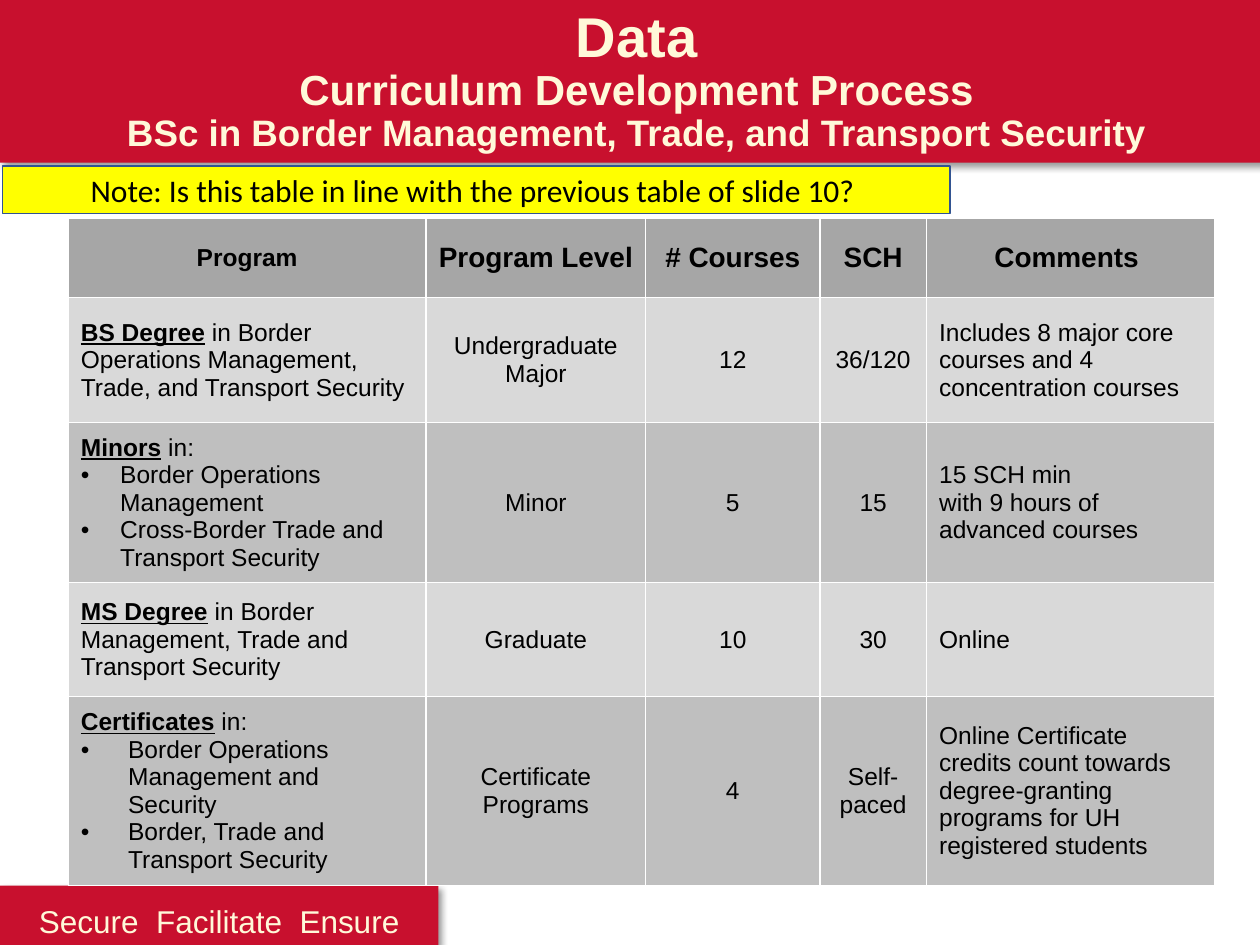
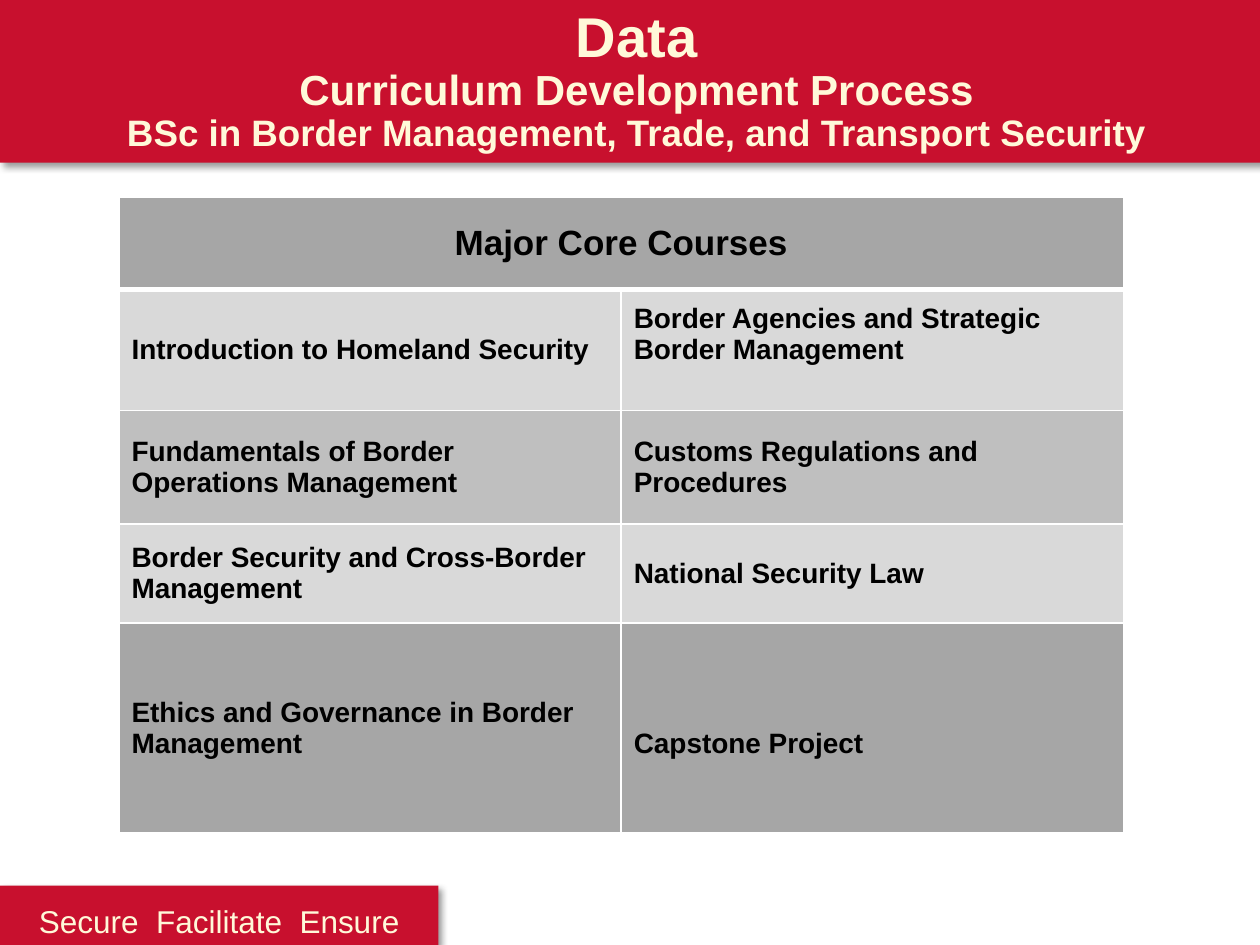
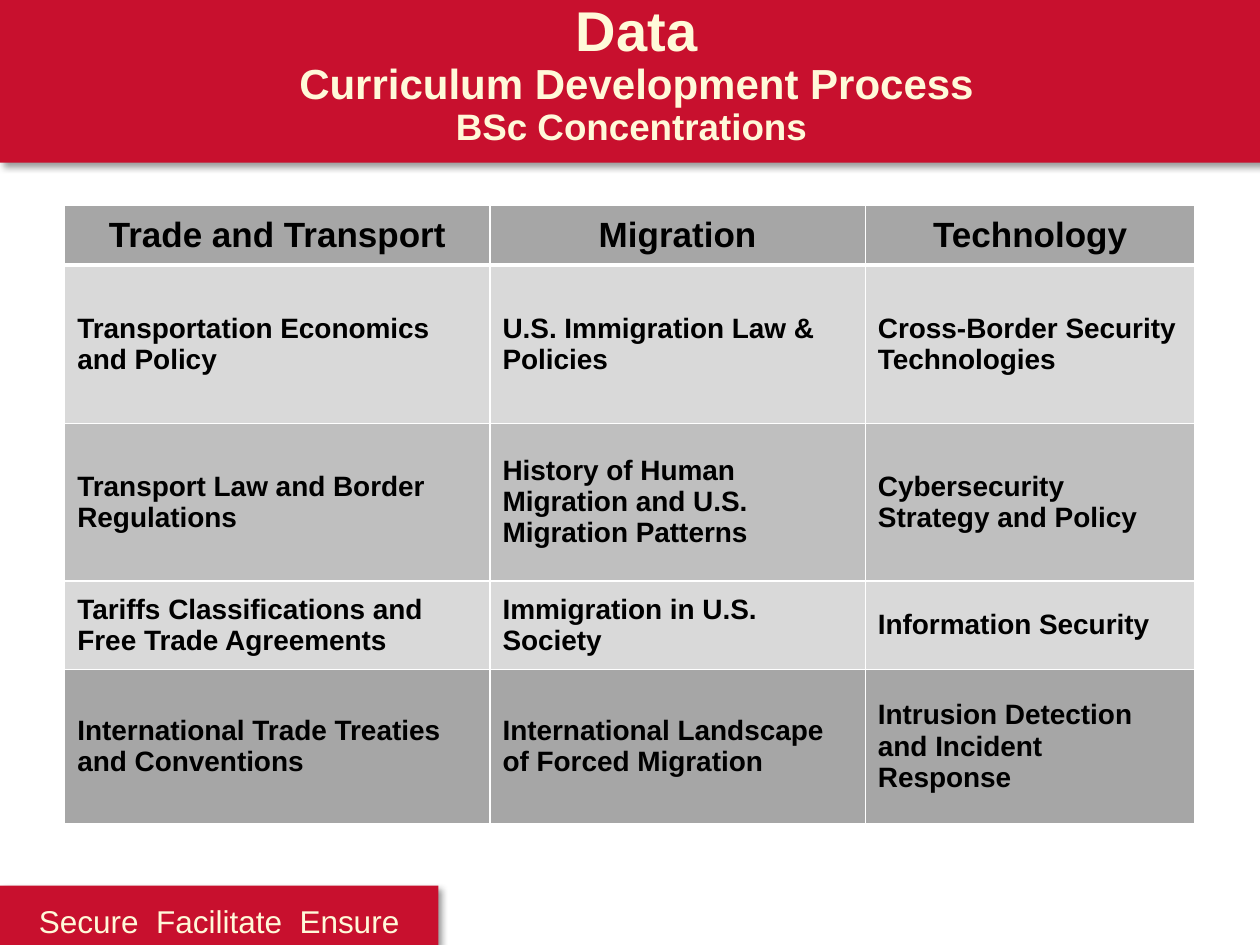
from dataclasses import dataclass

from lxml import etree
from pptx import Presentation
from pptx.dml.color import RGBColor
from pptx.enum import shapes, text
from pptx.oxml import ns
from pptx.util import Pt


@dataclass(frozen=True)
class Theme:
    red: str = "C8102E"
    cream: str = "FFF9D9"
    black: str = "000000"
    white: str = "FFFFFF"
    yellow: str = "FFFF00"
    blue: str = "325491"
    dark: str = "A6A6A6"
    mid: str = "BFBFBF"
    light: str = "D9D9D9"
    font: str = "Arial"
    note_font: str = "Calibri"
    title_sizes: tuple = (32, 24, 21)
    header: int = 20
    large: int = 18
    medium: int = 16
    small: int = 14


T = Theme()
CENTER, LEFT = text.PP_ALIGN.CENTER, text.PP_ALIGN.LEFT
TOP, MIDDLE = text.MSO_ANCHOR.TOP, text.MSO_ANCHOR.MIDDLE
PROGRAM_TITLE = ("Data\nCurriculum Development Process\n"
                 "BSc in Border Management, Trade, and Transport Security")
CONCENTRATION_TITLE = "Data\nCurriculum Development Process\nBSc Concentrations "


# --- Text and XML helpers ---
def style(p, size, color=T.black, font=T.font, bold=False, align=CENTER):
    p.alignment = align
    for r in p.runs:
        r.font.size, r.font.name, r.font.bold = Pt(size), font, bold
        r.font.color.rgb = RGBColor.from_string(color)


def sub(parent, tag, **attrs):
    return etree.SubElement(parent, ns.qn(tag), {k: str(v) for k, v in attrs.items()})


def add_shadow(sp):
    effects = sub(sp.element.spPr, "a:effectLst")
    shadow = sub(effects, "a:outerShdw", blurRad=Pt(4), dist=Pt(3),
                 dir=45 * 60000, algn="tl", rotWithShape=0)
    sub(sub(shadow, "a:srgbClr", val=T.black), "a:alpha", val=40000)


def set_border(cell, side, width):
    ln = etree.Element(ns.qn(f"a:ln{side}"), {"w": str(Pt(width))})
    sub(sub(ln, "a:solidFill"), "a:srgbClr", val=T.white)
    return ln


def set_bullet(p, indent):
    pPr = p._p.get_or_add_pPr()
    pPr.set("marL", str(Pt(indent)))
    pPr.set("indent", str(-Pt(indent)))
    sub(pPr, "a:buFont", typeface=T.font)
    sub(pPr, "a:buChar", char="•")


# --- Shared elements ---
def add_box(s, x, y, w, h, fill, line=None):
    sp = s.shapes.add_shape(shapes.MSO_SHAPE.RECTANGLE, Pt(x), Pt(y), Pt(w), Pt(h))
    sp.fill.solid()
    sp.fill.fore_color.rgb = RGBColor.from_string(fill)
    if line:
        sp.shadow.inherit = False
        sp.line.color.rgb = RGBColor.from_string(line)
        sp.line.width = Pt(1)
    else:
        sp.line.fill.background()
        add_shadow(sp)
    return sp


def add_title(s, words, y):
    title = s.shapes.title
    title.left, title.top, title.width, title.height = Pt(53.5), Pt(y), Pt(620.5), Pt(59)
    tf = title.text_frame
    tf.text = words
    tf.word_wrap, tf.auto_size = True, text.MSO_AUTO_SIZE.NONE
    tf.vertical_anchor = TOP
    for p, size in zip(tf.paragraphs, T.title_sizes):
        p.line_spacing = 0.9
        style(p, size, T.cream, bold=True)
    s.shapes.element.append(title.element)  # in front of the band


def new_slide(prs, title, title_y=1.5):
    s = prs.slides.add_slide(prs.slide_layouts[5])
    add_box(s, 0, 0, 720, 93, T.red)
    footer = add_box(s, 0, 506, 250.5, 34, T.red)
    tf = footer.text_frame
    tf.text = "Secure  Facilitate  Ensure"
    tf.vertical_anchor, tf.margin_top, tf.margin_bottom = TOP, Pt(9.5), 0
    style(tf.paragraphs[0], T.large, T.cream)
    add_title(s, title, title_y)
    return s


def add_note(s, words):
    sp = add_box(s, 1.5, 95, 541.5, 27, T.yellow, T.blue)
    tf = sp.text_frame
    tf.text = words
    tf.vertical_anchor = MIDDLE
    style(tf.paragraphs[0], T.large, font=T.note_font)


# --- Tables ---
def fill_cell(cell, words, size, bold, align, indent):
    """A line may open with a bullet, or with an underlined lead ended by '|'."""
    tf = cell.text_frame
    tf.text = words.replace("• ", "").replace("|", "")
    for p, line in zip(tf.paragraphs, words.split("\n")):
        if line.startswith("• "):
            set_bullet(p, indent)
        lead, bar, rest = line.partition("|")
        if bar:
            p.runs[0].text = lead
            p.add_run().text = rest
        style(p, size, bold=bold, align=align)
        if bar:
            p.runs[0].font.bold = p.runs[0].font.underline = True


def add_grid(s, x, y, widths, heights, rows, fills, size, header_size,
             bold=True, centered=(), header_line=3, indents=None):
    w, h = sum(widths), sum(heights)
    table = s.shapes.add_table(len(rows), len(widths), Pt(x), Pt(y), Pt(w), Pt(h)).table
    table.first_row = table.horz_banding = False
    for col, width in zip(table.columns, widths):
        col.width = Pt(width)
    for i, (row, height) in enumerate(zip(rows, heights)):
        table.rows[i].height = Pt(height)
        for j in range(len(widths)):
            cell = table.cell(i, j)
            if j < len(row):
                fill_cell(cell, row[j], header_size if i == 0 else size,
                          bold or i == 0, CENTER if i == 0 or j in centered else LEFT,
                          (indents or {}).get(i, 0))
            cell.vertical_anchor = MIDDLE
            tcPr = cell._tc.get_or_add_tcPr()
            for side in "LRTB":
                thick = (i, side) in ((0, "B"), (1, "T"))
                tcPr.append(set_border(cell, side, header_line if thick else 1))
            cell.fill.solid()
            cell.fill.fore_color.rgb = RGBColor.from_string(fills[i])
    return table


# --- Slides ---
def programs_slide(prs):
    s = new_slide(prs, PROGRAM_TITLE)
    rows = [
        ("Program", "Program Level", "# Courses", "SCH", "Comments "),
        ("BS Degree| in Border Operations Management, Trade, and Transport Security",
         "Undergraduate Major", "12", "36/120",
         "Includes 8 major core courses and 4 concentration courses"),
        ("Minors| in:\n• Border Operations Management\n"
         "• Cross-Border Trade and Transport Security",
         "Minor", "5", "15", "15 SCH min\nwith 9 hours of advanced courses"),
        ("MS Degree| in Border Management, Trade and Transport Security",
         "Graduate", "10", "30", "Online"),
        ("Certificates| in:\n• Border Operations Management and Security\n"
         "• Border, Trade and Transport Security",
         "Certificate Programs", "4", "Self-paced",
         "Online Certificate credits count towards degree-granting programs "
         "for UH registered students"),
    ]
    table = add_grid(s, 39, 124.5, (204.5, 125.5, 99.5, 61, 164.5),
                     (45.5, 71.5, 91.5, 65, 108), rows,
                     (T.dark, T.light, T.mid, T.light, T.mid), T.small, T.medium,
                     bold=False, centered=(1, 2, 3), header_line=1,
                     indents={2: 22.5, 4: 27})
    style(table.cell(0, 0).text_frame.paragraphs[0], T.small, bold=True)
    add_note(s, "Note: Is this table in line with the previous table of slide 10? ")


def core_courses_slide(prs):
    s = new_slide(prs, PROGRAM_TITLE)
    rows = [
        ("Major Core Courses",),
        ("Introduction to Homeland Security",
         "Border Agencies and Strategic Border Management"),
        ("Fundamentals of Border Operations Management",
         "Customs Regulations and Procedures"),
        ("Border Security and Cross-Border Management", "National Security Law"),
        ("Ethics and Governance in Border Management", "Capstone Project"),
    ]
    table = add_grid(s, 68, 112.5, (287, 287), (53, 69, 65, 56.5, 120), rows,
                     (T.dark, T.light, T.mid, T.light, T.dark), T.medium, T.header)
    table.cell(0, 0).merge(table.cell(0, 1))
    # Two cells sit off centre by half a line
    table.cell(1, 1).margin_bottom = Pt(21.5)
    table.cell(4, 1).margin_top = Pt(21.5)


def concentrations_slide(prs):
    s = new_slide(prs, CONCENTRATION_TITLE, -2)
    rows = [
        ("Trade and Transport", "Migration", "Technology"),
        ("Transportation Economics and Policy", "U.S. Immigration Law & Policies",
         "Cross-Border Security Technologies"),
        ("Transport Law and Border Regulations",
         "History of Human Migration and U.S. Migration Patterns",
         "Cybersecurity Strategy and Policy"),
        ("Tariffs Classifications and Free Trade Agreements",
         "Immigration in U.S. Society", "Information Security"),
        ("International Trade Treaties and Conventions",
         "International Landscape of Forced Migration",
         "Intrusion Detection and Incident Response"),
    ]
    add_grid(s, 37, 117, (243, 214.5, 188.5), (34.5, 90.5, 90, 50.5, 88), rows,
             (T.dark, T.light, T.mid, T.light, T.dark), T.medium, T.header)


def main():
    prs = Presentation()
    prs.slide_width, prs.slide_height = Pt(720), Pt(540)
    programs_slide(prs)
    core_courses_slide(prs)
    concentrations_slide(prs)
    prs.save("out.pptx")


if __name__ == "__main__":
    main()
